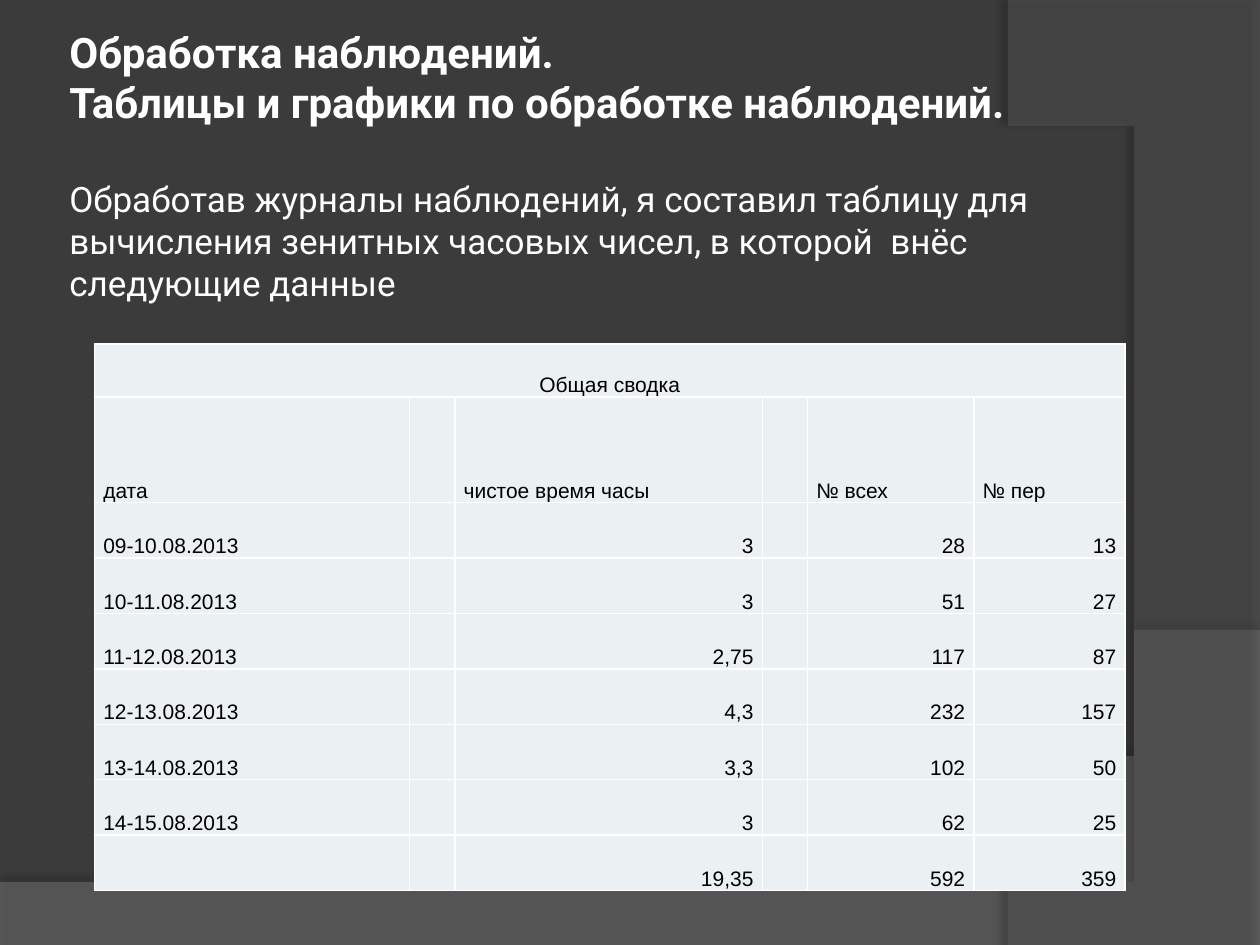
import pptx
import pptx.util
import pptx.dml.color
import pptx.enum.text
import pptx.oxml
import pptx.oxml.ns

Inches, Pt = pptx.util.Inches, pptx.util.Pt
ALIGN = pptx.enum.text.PP_ALIGN
ANCHOR = pptx.enum.text.MSO_ANCHOR
NS = pptx.oxml.ns.nsdecls("a")

HEADING = [
    ("Обработка наблюдений.", 24, True, 0),
    ("Таблицы и графики по обработке наблюдений.", 24, True, 0),
    ("Обработав журналы наблюдений, я составил таблицу для вычисления "
     "зенитных часовых чисел, в которой  внёс следующие данные", 20, False, 29),
]
CAPTION = "Общая сводка"
HEADERS = ["дата", "", "чистое время часы", "", "№ всех", "№ пер"]
RECORDS = [
    ("09-10.08.2013", "3", "28", "13"),
    ("10-11.08.2013", "3", "51", "27"),
    ("11-12.08.2013", "2,75", "117", "87"),
    ("12-13.08.2013", "4,3", "232", "157"),
    ("13-14.08.2013", "3,3", "102", "50"),
    ("14-15.08.2013", "3", "62", "25"),
    ("", "19,35", "592", "359"),
]
COL_WIDTHS = [2.5, 0.36, 2.44, 0.36, 1.32, 1.2]
ROW_HEIGHTS = [0.42, 0.84] + [0.44] * len(RECORDS)
WAVES = [
    {"corners": [(0, 7.05), (0, 7.5), (10, 7.5)],
     "curve": [(10, 5.2), (5.59, 7.29), (3.91, 7.19), (0, 7.05)],
     "color": "7F7F7F", "alpha": 45, "shadow": (35, 4, 3.5, 270)},
    {"corners": [(10, 0.02), (10, 7.5)],
     "curve": [(8.21, 7.5), (9.35, 6.19), (10.18, 3), (8, 0)],
     "color": "5E5E5E", "alpha": 40, "shadow": (45, 4, 4, 180)},
]


def rgb(value):
    return pptx.dml.color.RGBColor.from_string(value)


def bezier(points, steps=40):
    for i in range(steps + 1):
        t = i / steps
        weights = ((1 - t) ** 3, 3 * t * (1 - t) ** 2, 3 * t ** 2 * (1 - t), t ** 3)
        yield tuple(sum(w * pt[axis] for w, pt in zip(weights, points)) for axis in (0, 1))


def add_wave(s, wave):
    start, *rest = wave["corners"] + list(bezier(wave["curve"]))
    builder = s.shapes.build_freeform(*start, scale=Inches(1))
    builder.add_line_segments(rest, close=True)
    sp = builder.convert_to_shape()
    sp.fill.solid()
    sp.fill.fore_color.rgb = rgb(wave["color"])
    sp.line.fill.background()
    color = sp.element.spPr.find(".//" + pptx.oxml.ns.qn("a:srgbClr"))
    color.append(pptx.oxml.parse_xml(f'<a:alpha {NS} val="{wave["alpha"] * 1000}"/>'))
    alpha, blur, dist, angle = wave["shadow"]
    sp.element.spPr.append(pptx.oxml.parse_xml(
        f'<a:effectLst {NS}><a:outerShdw blurRad="{Pt(blur)}" dist="{Pt(dist)}" '
        f'dir="{angle * 60000}" algn="ctr" rotWithShape="0"><a:srgbClr val="000000">'
        f'<a:alpha val="{alpha * 1000}"/></a:srgbClr></a:outerShdw></a:effectLst>'))


def add_run(p, text, size, font, color, bold=False):
    r = p.add_run()
    r.text = text
    r.font.size, r.font.name, r.font.bold = Pt(size), font, bold
    r.font.color.rgb = rgb(color)


def format_title(title):
    title.left, title.top, title.width, title.height = map(Inches, (0.5, 0.3, 8.17, 2.35))
    tf = title.text_frame
    tf.word_wrap = True
    tf.auto_size = pptx.enum.text.MSO_AUTO_SIZE.NONE
    tf.vertical_anchor = ANCHOR.MIDDLE
    tf.margin_left = tf.margin_right = tf.margin_top = Inches(0.05)
    tf.margin_bottom = Inches(0.38)
    for i, (text, size, bold, before) in enumerate(HEADING):
        p = tf.add_paragraph() if i else tf.paragraphs[0]
        p.alignment = ALIGN.LEFT
        p.space_before = Pt(before)
        add_run(p, text, size, "Roboto", "FFFFFF", bold)


def fill_cell(cell, text, align):
    cell.margin_left = cell.margin_right = Inches(0.07)
    cell.margin_top = cell.margin_bottom = 0
    cell.vertical_anchor = ANCHOR.BOTTOM
    tcPr = cell._tc.get_or_add_tcPr()
    for side in "LRTB":
        tcPr.append(pptx.oxml.parse_xml(
            f'<a:ln{side} {NS} w="{Pt(1)}"><a:solidFill><a:srgbClr val="FFFFFF"/>'
            f'</a:solidFill></a:ln{side}>'))
    cell.fill.solid()
    cell.fill.fore_color.rgb = rgb("EBF0F2")
    if text:
        p = cell.text_frame.paragraphs[0]
        p.alignment = align
        add_run(p, text, 12, "Arial", "000000")


def add_summary(s):
    rows = [[CAPTION] + [""] * 5, HEADERS]
    rows += [[date, "", hours, "", total, perseids] for date, hours, total, perseids in RECORDS]
    table = s.shapes.add_table(
        len(rows), len(COL_WIDTHS), Inches(0.75), Inches(2.73),
        Inches(sum(COL_WIDTHS)), Inches(sum(ROW_HEIGHTS))).table
    for column, width in zip(table.columns, COL_WIDTHS):
        column.width = Inches(width)
    for row, height in zip(table.rows, ROW_HEIGHTS):
        row.height = Inches(height)
    table.cell(0, 0).merge(table.cell(0, len(COL_WIDTHS) - 1))
    for i, values in enumerate(rows):
        for j, text in enumerate(values):
            align = ALIGN.CENTER if i == 0 else ALIGN.RIGHT if i > 1 and j else ALIGN.LEFT
            fill_cell(table.cell(i, j), text, align)


def main():
    prs = pptx.Presentation()
    prs.slide_width, prs.slide_height = Inches(10), Inches(7.5)
    s = prs.slides.add_slide(prs.slide_layouts[5])
    s.background.fill.solid()
    s.background.fill.fore_color.rgb = rgb("3B3B3B")
    for wave in WAVES:
        add_wave(s, wave)
    title = s.shapes.title
    title.element.getparent().append(title.element)
    format_title(title)
    add_summary(s)
    prs.save("out.pptx")


if __name__ == "__main__":
    main()
